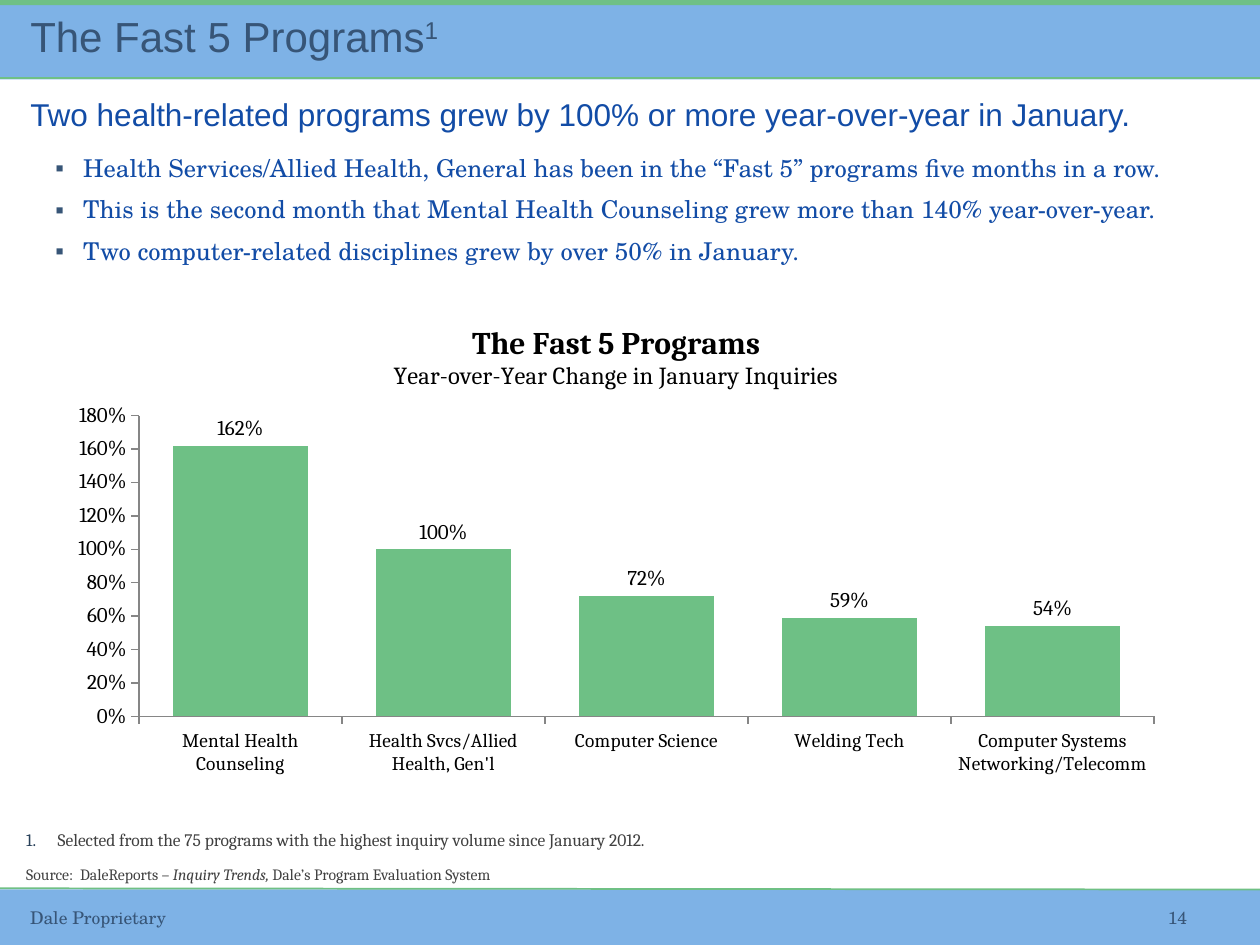
from lxml import etree
from pptx import Presentation
from pptx.chart.data import CategoryChartData
from pptx.dml.color import RGBColor
from pptx.enum.chart import XL_CHART_TYPE, XL_LABEL_POSITION, XL_TICK_LABEL_POSITION, XL_TICK_MARK
from pptx.enum.shapes import MSO_CONNECTOR, MSO_SHAPE
from pptx.enum.text import MSO_ANCHOR, MSO_AUTO_SIZE, PP_ALIGN
from pptx.oxml.ns import qn
from pptx.util import Inches, Pt

COLUMN = XL_CHART_TYPE.COLUMN_CLUSTERED
OUTSIDE_END = XL_LABEL_POSITION.OUTSIDE_END
LOW = XL_TICK_LABEL_POSITION.LOW
TICK_OUT, TICK_NONE = XL_TICK_MARK.OUTSIDE, XL_TICK_MARK.NONE
RECTANGLE, STRAIGHT = MSO_SHAPE.RECTANGLE, MSO_CONNECTOR.STRAIGHT
TOP, MIDDLE = MSO_ANCHOR.TOP, MSO_ANCHOR.MIDDLE
LEFT, CENTER = PP_ALIGN.LEFT, PP_ALIGN.CENTER
NO_FIT = MSO_AUTO_SIZE.NONE

BAND_BLUE = RGBColor(0x7E, 0xB2, 0xE6)
RULE_GREEN = RGBColor(0x6F, 0xC0, 0x85)
COLUMN_GREEN = RGBColor(0x6E, 0xC0, 0x85)
SLATE = RGBColor(0x37, 0x55, 0x77)
TEXT_BLUE = RGBColor(0x12, 0x4C, 0xA6)
NUMBER_BLUE = RGBColor(0x28, 0x40, 0x59)
NOTE_GRAY = RGBColor(0x40, 0x40, 0x40)
AXIS_GRAY = RGBColor(0x86, 0x86, 0x86)
BLACK = RGBColor(0, 0, 0)
SANS, SERIF, SCHOOL = "Arial", "Cambria", "TeX Gyre Schola"

PROGRAMS = {
    "Mental Health Counseling": 1.62,
    "Health Svcs/Allied Health, Gen'l": 1.0,
    "Computer Science": 0.72,
    "Welding Tech": 0.59,
    "Computer Systems Networking/Telecomm": 0.54,
}
BULLETS = [
    "Health Services/Allied Health, General has been in the “Fast 5” programs five months in a row.",
    "This is the second month that Mental Health Counseling grew more than 140% year-over-year.",
    "Two computer-related disciplines grew by over 50% in January.",
]


def style_font(font, name, size, color, bold=None, italic=None):
    """Set the face, size, colour and style of a font."""
    font.name, font.size = name, Pt(size)
    font.color.rgb = color
    font.bold, font.italic = bold, italic


def add_run(paragraph, text, name, size, color, **style):
    """Append one formatted run to a paragraph."""
    run = paragraph.add_run()
    run.text = text
    style_font(run.font, name, size, color, **style)
    return run


def space(paragraph, line, before=0, after=0):
    """Set the line and paragraph spacing."""
    paragraph.alignment = LEFT
    paragraph.line_spacing = line
    paragraph.space_before, paragraph.space_after = Pt(before), Pt(after)


def set_bullet(paragraph, tag, margin=0, indent=0, color=None, **attributes):
    """Give a paragraph its indents and its bullet element."""
    properties = paragraph._p.get_or_add_pPr()
    properties.set("marL", str(Inches(margin)))
    properties.set("indent", str(Inches(indent)))
    if color is not None:
        holder = etree.SubElement(properties, qn("a:buClr"))
        etree.SubElement(holder, qn("a:srgbClr"), val=str(color))
    etree.SubElement(properties, qn(tag), **attributes)


def place_placeholder(placeholder, box, anchor):
    """Move a placeholder to a box and return its text frame."""
    placeholder.left, placeholder.top, placeholder.width, placeholder.height = map(Inches, box)
    frame = placeholder.text_frame
    frame.auto_size, frame.vertical_anchor = NO_FIT, anchor
    return frame


def add_text(slide, box, anchor=TOP, wrap=True):
    """Add a text box and return its first paragraph."""
    frame = slide.shapes.add_textbox(*map(Inches, box)).text_frame
    frame.word_wrap, frame.vertical_anchor = wrap, anchor
    return frame.paragraphs[0]


def add_band(slide, box, color):
    """Add a plain filled band."""
    band = slide.shapes.add_shape(RECTANGLE, *map(Inches, box))
    band.shadow.inherit = False
    band.fill.solid()
    band.fill.fore_color.rgb = color
    band.line.fill.background()


def add_rule(slide, start, end):
    """Add a thin green rule."""
    rule = slide.shapes.add_connector(STRAIGHT, *map(Inches, start + end))
    rule.line.color.rgb, rule.line.width = RULE_GREEN, Pt(1)
    etree.SubElement(rule._element.spPr, qn("a:effectLst"))


def add_bands(slide):
    """Add the header and footer bands with their rules."""
    add_band(slide, (0, 7.06, 10, 0.44), BAND_BLUE)
    add_band(slide, (0, 0.04, 10, 0.59), BAND_BLUE)
    add_band(slide, (0, -0.01, 10, 0.05), RULE_GREEN)
    add_rule(slide, (0, 0.62), (10, 0.62))
    add_rule(slide, (0, 7.05), (10, 7.06))


def fill_title(placeholder, box):
    """Write the slide title with its note mark."""
    paragraph = place_placeholder(placeholder, box, MIDDLE).paragraphs[0]
    space(paragraph, 0.89)
    add_run(paragraph, "The Fast 5 Programs", SANS, 24, SLATE)
    mark = add_run(paragraph, "1", SANS, 24, SLATE)
    mark._r.get_or_add_rPr().set("baseline", "30000")


def fill_headline(placeholder, box):
    """Write the headline under the title."""
    paragraph = place_placeholder(placeholder, box, TOP).paragraphs[0]
    space(paragraph, 0.94, 0, 4)
    set_bullet(paragraph, "a:buNone")
    add_run(paragraph, "Two health-related programs grew by 100% or more year-over-year in January.",
            SANS, 18, TEXT_BLUE)


def fill_bullets(placeholder, box):
    """Write the bulleted findings."""
    frame = place_placeholder(placeholder, box, TOP)
    for index, text in enumerate(BULLETS):
        paragraph = frame.add_paragraph() if index else frame.paragraphs[0]
        space(paragraph, 0.94, 4 if index else 0, 4)
        set_bullet(paragraph, "a:buChar", 0.42, -0.22, SLATE, char="▪")
        add_run(paragraph, text, SCHOOL, 14, TEXT_BLUE)


def set_layout(parent, position, **values):
    """Give a chart part a manual layout at the given position."""
    layout = parent.find(qn("c:layout"))
    if layout is None:
        layout = etree.Element(qn("c:layout"))
        parent.insert(position, layout)
    manual = etree.SubElement(layout, qn("c:manualLayout"))
    for tag, value in values.items():
        etree.SubElement(manual, qn("c:" + tag), val=str(value))


def style_axis(axis, size):
    """Set the line, ticks and label font of an axis."""
    axis.has_major_gridlines = False
    axis.major_tick_mark, axis.minor_tick_mark = TICK_OUT, TICK_NONE
    axis.format.line.color.rgb = AXIS_GRAY
    style_font(axis.tick_labels.font, SERIF, size, BLACK)


def add_growth_chart(slide, box):
    """Add the column chart of program growth."""
    data = CategoryChartData(number_format="0%")
    data.categories = list(PROGRAMS)
    data.add_series("Series 1", list(PROGRAMS.values()))
    chart = slide.shapes.add_chart(COLUMN, *map(Inches, box), data).chart
    style_font(chart.font, SERIF, 12, BLACK)
    chart.has_legend = False

    title = chart.chart_title
    heading = title.text_frame.paragraphs[0]
    add_run(heading, "The Fast 5 Programs", SERIF, 18, BLACK, bold=True)
    subheading = title.text_frame.add_paragraph()
    add_run(subheading, "Year-over-Year Change in January Inquiries", SERIF, 14, BLACK, bold=False)
    set_layout(title._element, 1, xMode="edge", yMode="edge", x=0.29, y=0.04)
    set_layout(chart._chartSpace.chart.plotArea, 0, layoutTarget="inner", xMode="edge",
               yMode="edge", x=0.074, y=0.209, w=0.874, h=0.526)

    style_axis(chart.category_axis, 11)
    chart.category_axis.tick_label_position = LOW
    value_axis = chart.value_axis
    style_axis(value_axis, 12)
    value_axis.minimum_scale, value_axis.maximum_scale, value_axis.major_unit = 0, 1.8, 0.2
    value_axis.tick_labels.number_format = "0%"
    value_axis.tick_labels.number_format_is_linked = False

    plot = chart.plots[0]
    plot.gap_width, plot.vary_by_categories = 50, False
    series = plot.series[0]
    series.format.fill.solid()
    series.format.fill.fore_color.rgb = COLUMN_GREEN
    labels = series.data_labels
    labels.show_value, labels.position = True, OUTSIDE_END
    labels.number_format, labels.number_format_is_linked = "0%", False
    style_font(labels.font, SERIF, 12, BLACK)


def add_notes(slide, note_box, source_box):
    """Add the numbered note and the source line."""
    note = add_text(slide, note_box)
    space(note, 0.9, 0, 6)
    set_bullet(note, "a:buAutoNum", 0.25, -0.25, NUMBER_BLUE, type="arabicPeriod")
    add_run(note, "Selected from the 75 programs with the highest inquiry volume since January 2012.",
            SERIF, 10, NOTE_GRAY)
    source = add_text(slide, source_box, wrap=False)
    add_run(source, "Source:  DaleReports – ", SERIF, 9, NOTE_GRAY)
    add_run(source, "Inquiry Trends, ", SERIF, 9, NOTE_GRAY, italic=True)
    add_run(source, "Dale’s Program Evaluation System", SERIF, 9, NOTE_GRAY)


def add_footer(slide, owner_box, number_box):
    """Add the owner line and the page number."""
    add_run(add_text(slide, owner_box, MIDDLE), "Dale Proprietary", SCHOOL, 10, SLATE)
    number = add_text(slide, number_box, MIDDLE)
    number.alignment = CENTER
    add_run(number, "14", SCHOOL, 10, SLATE)


def main():
    """Build and save the presentation."""
    presentation = Presentation()
    presentation.slide_width, presentation.slide_height = Inches(10), Inches(7.5)
    slide = presentation.slides.add_slide(presentation.slide_layouts[3])
    title, headline, bullets = slide.placeholders
    add_bands(slide)
    for placeholder in (title, headline, bullets):
        slide.shapes._spTree.append(placeholder._element)
    fill_title(title, (0.14, 0, 6.11, 0.62))
    fill_headline(headline, (0.14, 0.73, 9.76, 0.44))
    fill_bullets(bullets, (0.14, 1.18, 9.76, 1.38))
    add_growth_chart(slide, (0.42, 2.35, 9.22, 4.54))
    add_notes(slide, (0.11, 6.55, 9.49, 0.26), (0.11, 6.81, 4.38, 0.25))
    add_footer(slide, (0.14, 7.06, 2.37, 0.44), (8.69, 7.06, 1.31, 0.44))
    presentation.save("out.pptx")


if __name__ == "__main__":
    main()
